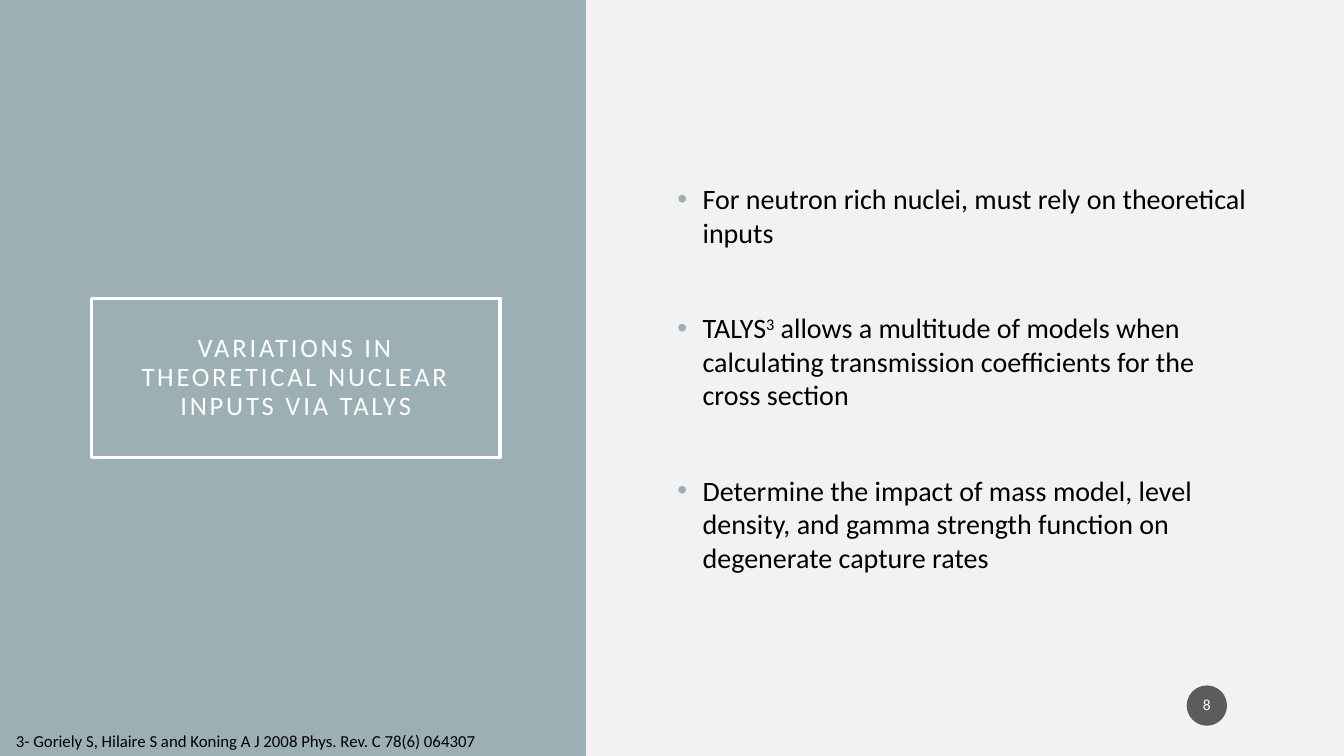
"""Builds the slide on variations in theoretical nuclear inputs."""
import pptx
import pptx.util
import pptx.dml.color
import pptx.enum.shapes
import pptx.enum.text
import pptx.oxml
import pptx.oxml.ns

TITLE = "VARIATIONS IN THEORETICAL NUCLEAR INPUTS VIA TALYS"
POINTS = [
    [("For neutron rich nuclei, must rely on theoretical inputs", False)],
    [("TALYS", False), ("3", True),
     (" allows a multitude of models when calculating transmission "
      "coefficients for the cross section", False)],
    [("Determine the impact of mass model, level density, and gamma strength "
      "function on degenerate capture rates", False)],
]
CITATION = "3- Goriely S, Hilaire S and Koning A J 2008 Phys. Rev. C 78(6) 064307"
PAGE = "8"

WIDTH, HEIGHT = 13.33, 7.5
SPLIT = 5.81
FONT = "Calibri"
SLATE, PALE, DARK, WHITE, BLACK = "9BAFB5", "F2F2F2", "1D1D1D", "FFFFFF", "000000"
RECTANGLE = pptx.enum.shapes.MSO_SHAPE.RECTANGLE
OVAL = pptx.enum.shapes.MSO_SHAPE.OVAL
CENTER = pptx.enum.text.PP_ALIGN.CENTER
MIDDLE = pptx.enum.text.MSO_ANCHOR.MIDDLE


def rgb(value):
    """Turn a hex string into a colour."""
    return pptx.dml.color.RGBColor.from_string(value)


def element(markup):
    """Parse one drawing element with its namespace declared."""
    head, tail = markup.split(" ", 1)
    return pptx.oxml.parse_xml(f"{head} {pptx.oxml.ns.nsdecls('a')} {tail}")


def style(font, size, color):
    """Apply the slide's typeface with a size and colour."""
    font.name, font.size = FONT, pptx.util.Pt(size)
    font.color.rgb = rgb(color)


def add_panel(slide, kind, box, fill=None, line=None):
    """Add a preset shape with an optional fill and outline."""
    panel = slide.shapes.add_shape(kind, *map(pptx.util.Inches, box))
    panel.shadow.inherit = False
    if fill:
        panel.fill.solid()
        panel.fill.fore_color.rgb = rgb(fill)
    else:
        panel.fill.background()
    if line:
        panel.line.color.rgb = rgb(line)
        panel.line.width = pptx.util.Pt(2.5)
    else:
        panel.line.fill.background()
    return panel


def write_label(panel, text, size, insets):
    """Write centred white text inside a shape."""
    frame = panel.text_frame
    frame.text = text
    frame.word_wrap = True
    frame.vertical_anchor = MIDDLE
    frame.margin_left = frame.margin_right = pptx.util.Inches(insets[0])
    frame.margin_top = frame.margin_bottom = pptx.util.Inches(insets[1])
    label = frame.paragraphs[0]
    label.alignment, label.line_spacing = CENTER, 0.9
    style(label.runs[0].font, size, WHITE)
    return label.runs[0]


def add_points(slide, box):
    """Add the bulleted points, evenly spaced and vertically centred."""
    frame = slide.shapes.add_textbox(*map(pptx.util.Inches, box)).text_frame
    frame.word_wrap = True
    frame.vertical_anchor = MIDDLE
    for index, segments in enumerate(POINTS):
        point = frame.add_paragraph() if index else frame.paragraphs[0]
        properties = point._p.get_or_add_pPr()
        indent = pptx.util.Inches(0.25)
        properties.set("marL", str(indent))
        properties.set("indent", str(-indent))
        point.space_before = pptx.util.Pt(44 if index else 0)
        properties.append(element(f'<a:buClr ><a:srgbClr val="{SLATE}"/></a:buClr>'))
        properties.append(element('<a:buFont typeface="Arial"/>'))
        properties.append(element('<a:buChar char="•"/>'))
        for text, raised in segments:
            run = point.add_run()
            run.text = text
            style(run.font, 20, BLACK)
            if raised:
                run._r.get_or_add_rPr().set("baseline", "30000")


def main():
    """Build and save the slide."""
    deck = pptx.Presentation()
    deck.slide_width = pptx.util.Inches(WIDTH)
    deck.slide_height = pptx.util.Inches(HEIGHT)
    slide = deck.slides.add_slide(deck.slide_layouts[6])
    slide.background.fill.solid()
    slide.background.fill.fore_color.rgb = rgb(SLATE)

    title = add_panel(slide, RECTANGLE, (0.91, 2.96, 4.05, 1.58), line=WHITE)
    heading = write_label(title, TITLE, 19, (0.2, 0.2))
    heading._r.get_or_add_rPr().set("spc", "200")

    add_panel(slide, RECTANGLE, (SPLIT, 0, WIDTH - SPLIT, HEIGHT), fill=PALE)
    add_points(slide, (6.62, 0.88, 5.92, 5.74))

    badge = add_panel(slide, OVAL, (11.77, 6.8, 0.4, 0.4), fill=DARK)
    tint = badge._element.spPr.find(".//" + pptx.oxml.ns.qn("a:srgbClr"))
    tint.append(element('<a:alpha val="70000"/>'))
    write_label(badge, PAGE, 11, (0.02, 0.05))

    citation = slide.shapes.add_textbox(*map(pptx.util.Inches, (0.06, 7.2, 4.89, 0.3)))
    citation.text_frame.text = CITATION
    citation.text_frame.word_wrap = False
    style(citation.text_frame.paragraphs[0].runs[0].font, 12, BLACK)
    deck.save("out.pptx")


if __name__ == "__main__":
    main()
